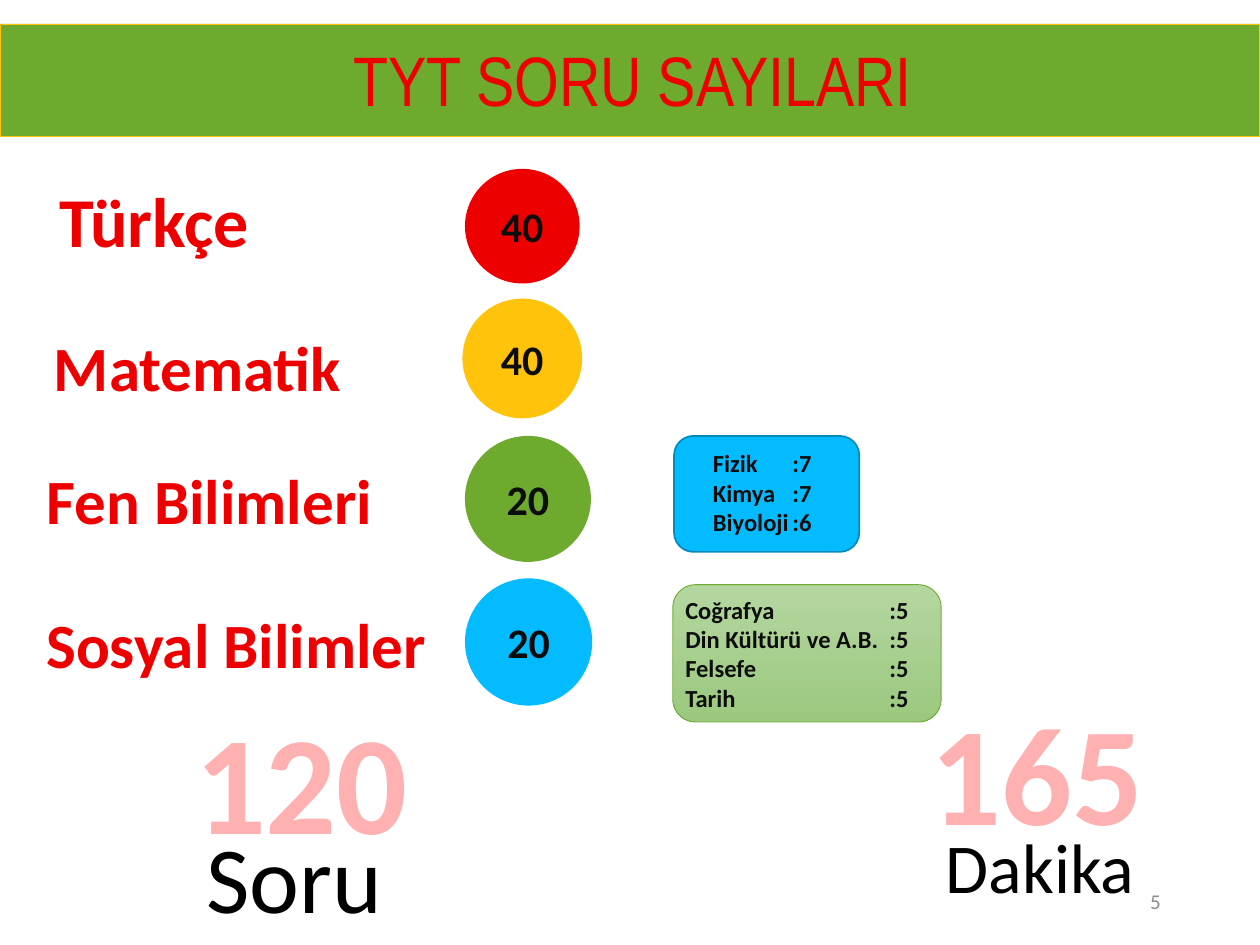
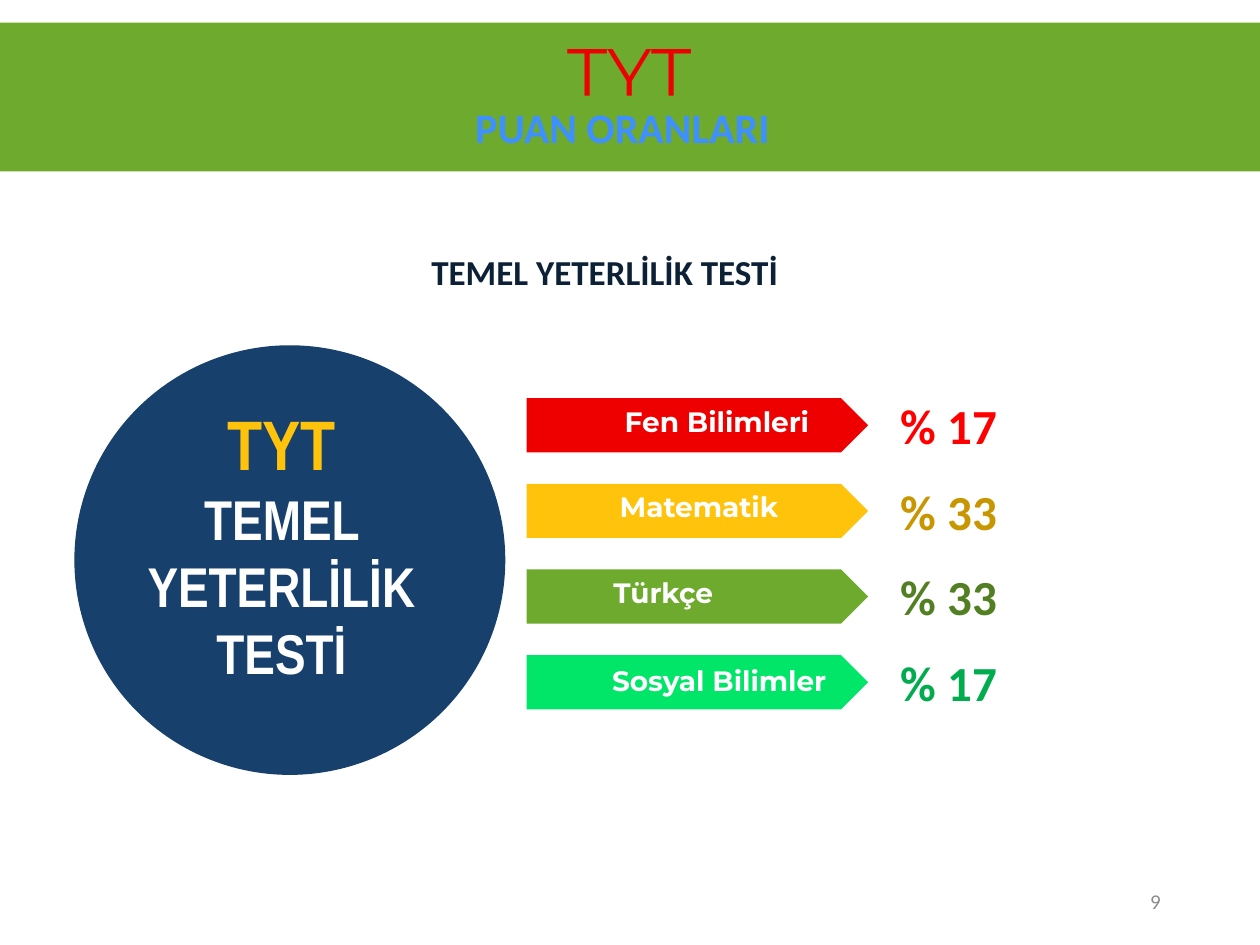
from lxml.etree import SubElement
from pptx import Presentation
from pptx.dml.color import RGBColor
from pptx.enum.shapes import MSO_SHAPE
from pptx.enum.text import MSO_ANCHOR, PP_ALIGN
from pptx.oxml.ns import qn
from pptx.util import Inches, Pt

WIDTH, HEIGHT = Inches(10), Inches(7.5)
COLUMN, ROW = WIDTH / 10, HEIGHT / 7.5

RED = RGBColor(0xEF, 0x00, 0x00)
YELLOW = RGBColor(0xFF, 0xC3, 0x0B)
GREEN = RGBColor(0x6D, 0xAA, 0x2D)
SKY = RGBColor(0x05, 0xBB, 0xFF)
SKY_EDGE = RGBColor(0x04, 0x8A, 0xBD)
MINT = RGBColor(0x01, 0xE5, 0x69)
NAVY = RGBColor(0x17, 0x40, 0x6D)
DARK_NAVY = RGBColor(0x0C, 0x20, 0x36)
BLUE = RGBColor(0x3F, 0x90, 0xFF)
PINK = RGBColor(0xFF, 0xB1, 0xB1)
PALE_GREEN = RGBColor(0xB4, 0xD7, 0xA0)
SOFT_GREEN = RGBColor(0x9B, 0xC8, 0x7F)
BRIGHT_RED = RGBColor(0xFF, 0x00, 0x00)
DARK_YELLOW = RGBColor(0xC8, 0x96, 0x00)
DARK_GREEN = RGBColor(0x52, 0x7F, 0x22)
DARK_MINT = RGBColor(0x01, 0xAC, 0x4F)
GRAY = RGBColor(0x8C, 0x8C, 0x8C)
INK = RGBColor(0x0D, 0x0D, 0x0D)
BLACK = RGBColor(0, 0, 0)
WHITE = RGBColor(0xFF, 0xFF, 0xFF)

BODY, NARROW, DISPLAY = "Calibri", "Arial Narrow", "Montserrat"
LEFT, CENTER, RIGHT = PP_ALIGN.LEFT, PP_ALIGN.CENTER, PP_ALIGN.RIGHT


def area(left, top, width, height):
    """Turn grid columns and rows into slide lengths."""
    return (round(left * COLUMN), round(top * ROW),
            round(width * COLUMN), round(height * ROW))


def write(paragraph, text, size, color, font=BODY, bold=True, align=LEFT):
    paragraph.alignment = align
    span = paragraph.add_run()
    span.text = text
    span.font.name = font
    span.font.size = Pt(size)
    span.font.bold = bold
    span.font.color.rgb = color


def add_text(page, place, text, size, color, **style):
    box = page.shapes.add_textbox(*area(*place))
    box.text_frame.word_wrap = True
    write(box.text_frame.paragraphs[0], text, size, color, **style)
    return box


def add_shape(page, kind, place, fill, edge=None, edge_width=0.5):
    shape = page.shapes.add_shape(kind, *area(*place))
    shape.shadow.inherit = False
    shape.fill.solid()
    shape.fill.fore_color.rgb = fill
    if edge is None:
        shape.line.fill.background()
    else:
        shape.line.color.rgb = edge
        shape.line.width = Pt(edge_width)
    return shape


def add_band(page, top, height, edge=None):
    return add_shape(page, MSO_SHAPE.RECTANGLE, (0, top, 10, height), GREEN, edge)


def label_band(band, text, size, color, font):
    band.text_frame.vertical_anchor = MSO_ANCHOR.TOP
    write(band.text_frame.paragraphs[0], text, size, color, font=font,
          bold=font == BODY, align=CENTER)


def add_page_number(page, number):
    box = add_text(page, (7.06, 6.95, 2.25, 0.4), number, 12, GRAY,
                   bold=False, align=RIGHT)
    box.text_frame.vertical_anchor = MSO_ANCHOR.MIDDLE


def add_count(page, left, top, size, count, fill):
    circle = add_shape(page, MSO_SHAPE.OVAL, (left, top, size, size), fill)
    circle.text_frame.vertical_anchor = MSO_ANCHOR.MIDDLE
    write(circle.text_frame.paragraphs[0], count, 24, INK, align=CENTER)


def add_breakdown(page, place, lessons, tab):
    """List lessons with their question counts lined up at a tab stop."""
    box = page.shapes.add_textbox(*area(*place))
    frame = box.text_frame
    frame.word_wrap = True
    for index, (lesson, count) in enumerate(lessons):
        paragraph = frame.add_paragraph() if index else frame.paragraphs[0]
        write(paragraph, f"{lesson}\t:{count}", 14, INK)
        stops = SubElement(paragraph._p.get_or_add_pPr(), qn("a:tabLst"))
        SubElement(stops, qn("a:tab"), pos=str(round(tab * COLUMN)), algn="l")


def add_weight(page, row, label, label_left, label_top, fill, percent, color):
    top = 3.16 + 0.68 * row
    add_shape(page, MSO_SHAPE.PENTAGON, (4.18, top, 2.71, 0.43), fill)
    add_text(page, (label_left, top + label_top, 2.55, 0.37), label, 16, WHITE,
             font=DISPLAY)
    add_text(page, (7.05, top - 0.07, 1.45, 0.57), percent, 28, color)


def build_question_counts(page):
    add_band(page, 0.19, 0.89, YELLOW)
    add_text(page, (0.02, 0.24, 10, 0.77), "TYT SORU SAYILARI", 40, RED,
             font=NARROW, bold=False, align=CENTER)

    subjects = [
        ("Türkçe", 40, 0.37, 1.36, "40", RED, 3.69, 1.34, 0.91),
        ("Matematik", 36, 0.33, 2.56, "40", YELLOW, 3.67, 2.37, 0.95),
        ("Fen Bilimleri", 36, 0.27, 3.61, "20", GREEN, 3.69, 3.46, 1),
        ("Sosyal Bilimler", 36, 0.27, 4.76, "20", SKY, 3.69, 4.59, 1.01),
    ]
    for name, size, left, top, count, fill, x, y, diameter in subjects:
        add_text(page, (left, top, 3.42, 0.71), name, size, RED)
        add_count(page, x, y, diameter, count, fill)

    add_shape(page, MSO_SHAPE.ROUNDED_RECTANGLE, (5.35, 3.46, 1.47, 0.92),
              SKY, SKY_EDGE, 1)
    add_breakdown(page, (5.56, 3.51, 1.25, 0.81),
                  [("Fizik", 7), ("Kimya", 7), ("Biyoloji", 6)], 0.63)

    social = add_shape(page, MSO_SHAPE.ROUNDED_RECTANGLE,
                       (5.34, 4.64, 2.13, 1.09), PALE_GREEN, GREEN)
    social.fill.gradient()
    social.fill.gradient_angle = 270
    for stop, color in zip(social.fill.gradient_stops, (PALE_GREEN, SOFT_GREEN)):
        stop.color.rgb = color
    add_breakdown(page, (5.34, 4.67, 2.85, 1.04),
                  [("Coğrafya", 5), ("Din Kültürü ve A.B.", 5),
                   ("Felsefe", 5), ("Tarih", 5)], 1.62)

    add_text(page, (1.45, 5.46, 2.45, 1.45), "120", 80, PINK)
    add_text(page, (1.54, 6.45, 1.68, 1.01), "Soru", 54, BLACK, bold=False)
    add_text(page, (7.29, 5.39, 2.61, 1.47), "165", 80, PINK)
    add_text(page, (7.41, 6.49, 1.96, 0.79), "Dakika", 40, BLACK, bold=False)
    add_page_number(page, "5")


def build_score_weights(page):
    add_text(page, (0.31, 1.94, 8.98, 0.44), "TEMEL YETERLİLİK TESTİ", 20,
             DARK_NAVY, align=CENTER)

    weights = [
        ("Fen Bilimleri", 4.86, 0, RED, "% 17", BRIGHT_RED),
        ("Matematik", 4.82, 0, YELLOW, "% 33", DARK_YELLOW),
        ("Türkçe", 4.77, 0, GREEN, "% 33", DARK_GREEN),
        ("Sosyal Bilimler", 4.76, 0.02, MINT, "% 17", DARK_MINT),
    ]
    for row, weight in enumerate(weights):
        add_weight(page, row, *weight)

    label_band(add_band(page, 0.18, 1.18), "TYT", 40, RED, DISPLAY)
    subtitle = add_shape(page, MSO_SHAPE.RECTANGLE, (0.45, 0.76, 8.98, 0.5), GREEN)
    label_band(subtitle, "PUAN ORANLARI", 24, BLUE, BODY)

    add_shape(page, MSO_SHAPE.OVAL, (0.59, 2.74, 3.42, 3.41), NAVY)
    test_name = add_text(page, (0.89, 3.13, 2.69, 2.39), "TYT", 40, YELLOW,
                         font=NARROW, align=CENTER)
    write(test_name.text_frame.add_paragraph(), "TEMEL YETERLİLİK TESTİ", 32,
          WHITE, font=NARROW, align=CENTER)
    add_page_number(page, "9")


def main():
    deck = Presentation()
    deck.slide_width, deck.slide_height = WIDTH, HEIGHT
    blank = deck.slide_layouts[6]
    for build in (build_question_counts, build_score_weights):
        build(deck.slides.add_slide(blank))
    deck.save("out.pptx")


if __name__ == "__main__":
    main()
